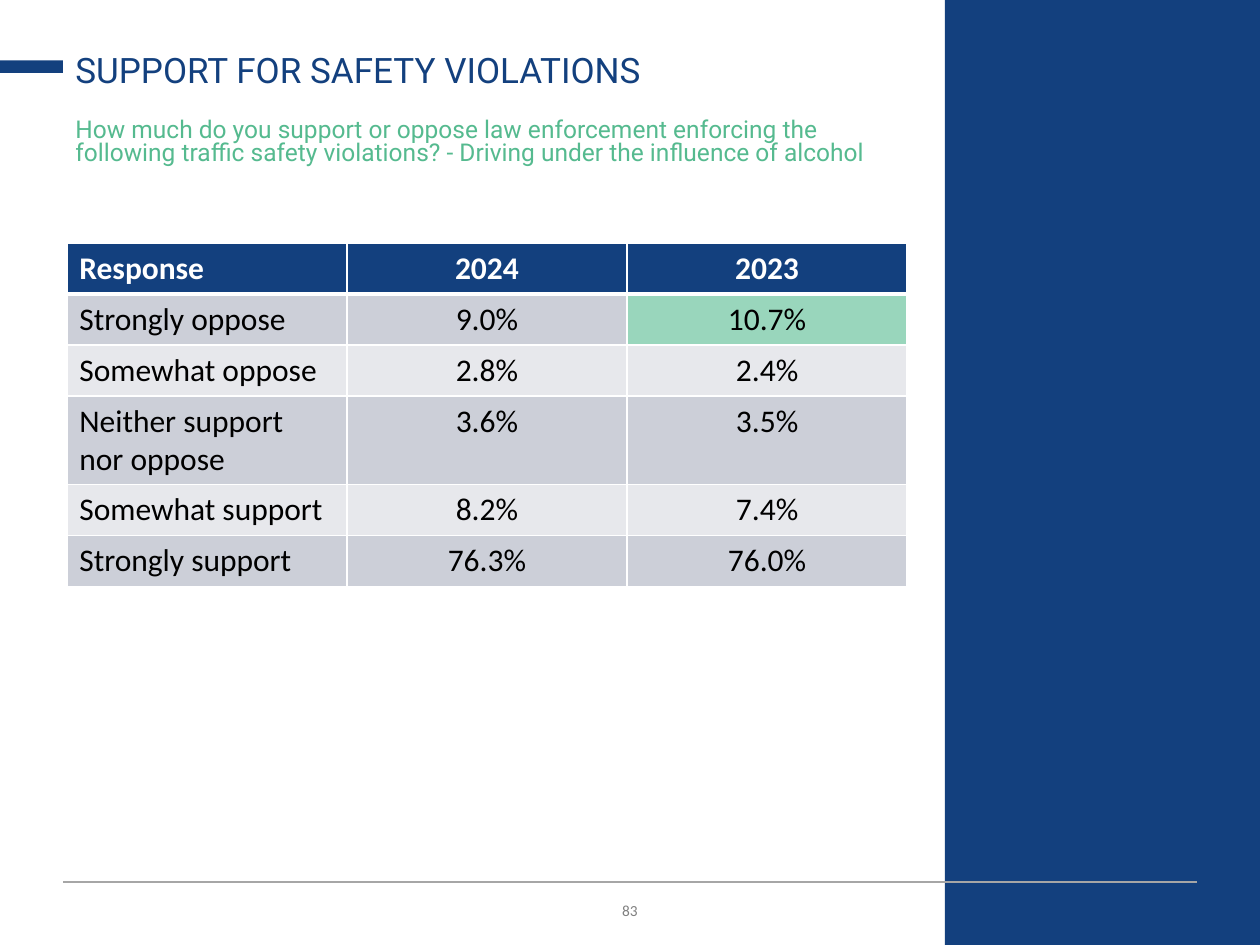
from dataclasses import dataclass

import pptx
import pptx.dml.color
import pptx.enum.shapes
import pptx.enum.text
import pptx.oxml
import pptx.oxml.ns
import pptx.util

Inches = pptx.util.Inches
Align = pptx.enum.text.PP_ALIGN
Anchor = pptx.enum.text.MSO_ANCHOR


@dataclass(frozen=True)
class Theme:
    navy: str = "13407E"
    green: str = "55BA8F"
    highlight: str = "99D6BC"
    bands: tuple = ("CCCFD8", "E7E8EC")
    white: str = "FFFFFF"
    black: str = "000000"
    rule: str = "A6A6A6"
    number: str = "808080"
    heading_font: str = "Roboto"
    body_font: str = "Calibri"
    title_size: int = 20
    question_size: int = 14
    table_size: int = 18
    number_size: int = 11


def rgb(color):
    return pptx.dml.color.RGBColor.from_string(color)


def set_borders(cell, color, bottom_width):
    """Draw 1 pt borders, with a separate width for the bottom edge."""
    properties = cell._tc.get_or_add_tcPr()
    widths = {"lnL": 1, "lnR": 1, "lnT": 1, "lnB": bottom_width}
    for position, (tag, width) in enumerate(widths.items()):
        properties.insert(position, pptx.oxml.parse_xml(
            f'<a:{tag} {pptx.oxml.ns.nsdecls("a")} w="{pptx.util.Pt(width)}">'
            f'<a:solidFill><a:srgbClr val="{color}"/></a:solidFill></a:{tag}>'))


class PageBuilder:
    def __init__(self, page, theme):
        self.page = page
        self.theme = theme

    def add_span(self, para, text, font, size, color, bold=False):
        span = para.add_run()
        span.text = text
        span.font.name = font
        span.font.size = pptx.util.Pt(size)
        span.font.color.rgb = rgb(color)
        span.font.bold = bold
        return span

    def text(self, area, text, font, size, color, anchor=Anchor.TOP,
             align=Align.LEFT, spacing=1.0):
        box = self.page.shapes.add_textbox(*map(Inches, area))
        frame = box.text_frame
        frame.word_wrap = True
        frame.vertical_anchor = anchor
        para = frame.paragraphs[0]
        para.alignment = align
        para.line_spacing = spacing
        return self.add_span(para, text, font, size, color)

    def block(self, area, color):
        block = self.page.shapes.add_shape(
            pptx.enum.shapes.MSO_SHAPE.RECTANGLE, *map(Inches, area))
        block.shadow.inherit = False
        block.fill.solid()
        block.fill.fore_color.rgb = rgb(color)
        block.line.fill.background()

    def rule(self, start, end, color, width):
        line = self.page.shapes.add_connector(
            pptx.enum.shapes.MSO_CONNECTOR.STRAIGHT,
            *map(Inches, (*start, *end)))
        line.line.color.rgb = rgb(color)
        line.line.width = pptx.util.Pt(width)
        line._element.spPr.append(pptx.oxml.parse_xml(
            f'<a:effectLst {pptx.oxml.ns.nsdecls("a")}/>'))

    def table(self, area, rows, highlighted):
        """Fill a banded table; highlighted holds (row, column) pairs."""
        theme = self.theme
        table = self.page.shapes.add_table(
            len(rows), len(rows[0]), *map(Inches, area)).table
        for row, values in enumerate(rows):
            header = row == 0
            for column, value in enumerate(values):
                cell = table.cell(row, column)
                if header:
                    fill = theme.navy
                elif (row, column) in highlighted:
                    fill = theme.highlight
                else:
                    fill = theme.bands[(row - 1) % 2]
                cell.fill.solid()
                cell.fill.fore_color.rgb = rgb(fill)
                set_borders(cell, theme.white, 3 if header else 1)
                para = cell.text_frame.paragraphs[0]
                para.alignment = Align.CENTER if column else Align.LEFT
                self.add_span(para, value, theme.body_font, theme.table_size,
                              theme.white if header else theme.black, header)


RESPONSES = [
    ("Response", "2024", "2023"),
    ("Strongly oppose", "9.0%", "10.7%"),
    ("Somewhat oppose", "2.8%", "2.4%"),
    ("Neither support nor oppose", "3.6%", "3.5%"),
    ("Somewhat support", "8.2%", "7.4%"),
    ("Strongly support", "76.3%", "76.0%"),
]


def main():
    theme = Theme()
    deck = pptx.Presentation()
    deck.slide_width, deck.slide_height = Inches(10), Inches(7.5)
    builder = PageBuilder(deck.slides.add_slide(deck.slide_layouts[6]), theme)

    number = builder.text((0.5, 7.06, 9, 0.3), "83", theme.body_font,
                          theme.number_size, theme.number,
                          Anchor.MIDDLE, Align.CENTER)
    number._r.get_or_add_rPr().set("cap", "small")
    builder.block((7.5, 0, 2.5, 7.5), theme.navy)
    builder.rule((0.5, 7), (9.5, 7), theme.rule, 0.75)
    builder.block((0, 0.48, 0.5, 0.1), theme.navy)
    builder.text((0.5, 0.9, 6.7, 0.67),
                 "How much do you support or oppose law enforcement enforcing "
                 "the following traffic safety violations? - Driving under "
                 "the influence of alcohol",
                 theme.heading_font, theme.question_size, theme.green,
                 spacing=0.8)
    builder.text((0.5, 0.29, 6.7, 0.48), "SUPPORT FOR SAFETY VIOLATIONS",
                 theme.heading_font, theme.title_size, theme.navy,
                 Anchor.BOTTOM, spacing=0.9)
    builder.table((0.53, 1.93, 6.67, 2.43), RESPONSES, {(1, 2)})
    deck.save("out.pptx")


if __name__ == "__main__":
    main()
